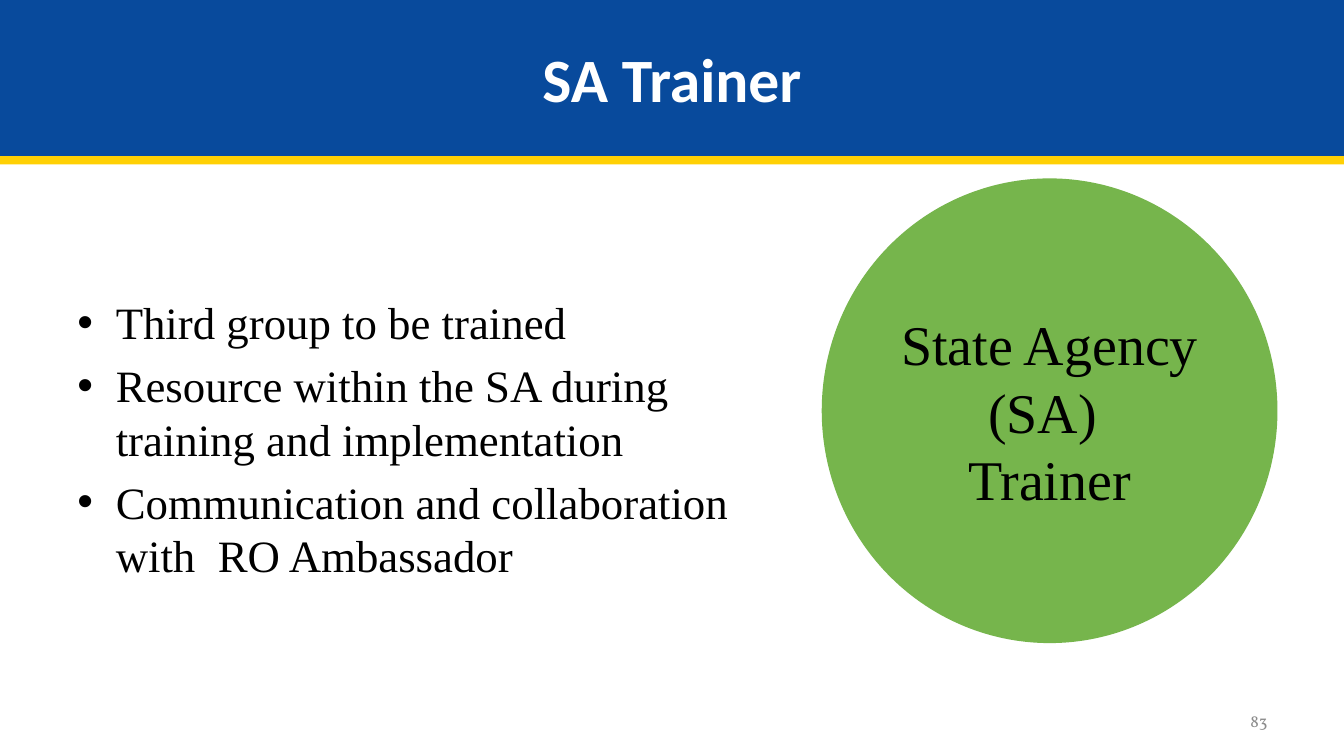
import pptx
import pptx.util
import pptx.dml.color
import pptx.enum.shapes
import pptx.enum.text
from lxml import etree
from pptx.util import Inches

COLORS = {"blue": "084A9C", "yellow": "FFD004", "green": "76B54C",
          "black": "000000", "white": "FFFFFF", "gray": "8C8C8C"}
SERIF = "Times New Roman"
ALIGN = pptx.enum.text.PP_ALIGN
SHAPE = pptx.enum.shapes.MSO_SHAPE
BULLETS = [
    "Third group to be trained",
    "Resource within the SA during training and implementation",
    "Communication and collaboration with  RO Ambassador",
]


def rgb(name):
    return pptx.dml.color.RGBColor.from_string(COLORS[name])


def fill_shape(shape, color):
    shape.fill.solid()
    shape.fill.fore_color.rgb = rgb(color)
    shape.line.fill.background()
    shape.shadow.inherit = False


def set_up_frame(shape):
    tf = shape.text_frame
    tf.word_wrap = True
    tf.auto_size = pptx.enum.text.MSO_AUTO_SIZE.NONE
    tf.vertical_anchor = pptx.enum.text.MSO_ANCHOR.MIDDLE
    return tf


def format_paragraph(p, size, font, color, align, bold=False):
    p.alignment = align
    for r in p.runs:
        r.font.size = pptx.util.Pt(size)
        r.font.name = font
        r.font.bold = bold
        r.font.color.rgb = rgb(color)


def write(shape, text, size, font, color, align, bold=False):
    tf = set_up_frame(shape)
    tf.text = text
    format_paragraph(tf.paragraphs[0], size, font, color, align, bold)


def add_shape(s, kind, box, color):
    sp = s.shapes.add_shape(kind, *map(Inches, box))
    fill_shape(sp, color)
    return sp


def add_textbox(s, box):
    return s.shapes.add_textbox(*map(Inches, box))


def add_title(s, text, box):
    sp = s.shapes.title
    sp.left, sp.top, sp.width, sp.height = map(Inches, box)
    fill_shape(sp, "blue")
    write(sp, text, 44, "Calibri", "white", ALIGN.CENTER, bold=True)


def add_bullet(p):
    pPr = p._p.get_or_add_pPr()
    indent = Inches(0.38)
    pPr.set("marL", str(indent))
    pPr.set("indent", str(-indent))
    ns = pptx.oxml.ns.qn
    etree.SubElement(pPr, ns("a:buFont"), typeface="Arial")
    etree.SubElement(pPr, ns("a:buChar"), char="•")


def add_bullet_list(s, items, box):
    tf = set_up_frame(add_textbox(s, box))
    for i, item in enumerate(items):
        p = tf.add_paragraph() if i else tf.paragraphs[0]
        p.text = item
        add_bullet(p)
        if i:
            p.space_before = pptx.util.Pt(6.4)
        format_paragraph(p, 32, SERIF, "black", ALIGN.LEFT)


def main():
    prs = pptx.Presentation()
    prs.slide_width, prs.slide_height = Inches(13.33), Inches(7.5)
    s = prs.slides.add_slide(prs.slide_layouts[5])

    add_title(s, "SA Trainer", (0, 0, 13.33, 1.55))
    add_shape(s, SHAPE.RECTANGLE, (0, 1.55, 13.33, 0.08), "yellow")
    add_bullet_list(s, BULLETS, (0.67, 2, 7.3, 4.7))
    circle = add_shape(s, SHAPE.FLOWCHART_CONNECTOR, (8.15, 1.77, 4.52, 4.61), "green")
    write(circle, "State Agency (SA) \vTrainer", 40, SERIF, "black", ALIGN.CENTER)
    number = add_textbox(s, (9.56, 6.95, 3.11, 0.4))
    write(number, "83", 12, "Vollkorn", "gray", ALIGN.RIGHT)

    prs.save("out.pptx")


if __name__ == "__main__":
    main()
